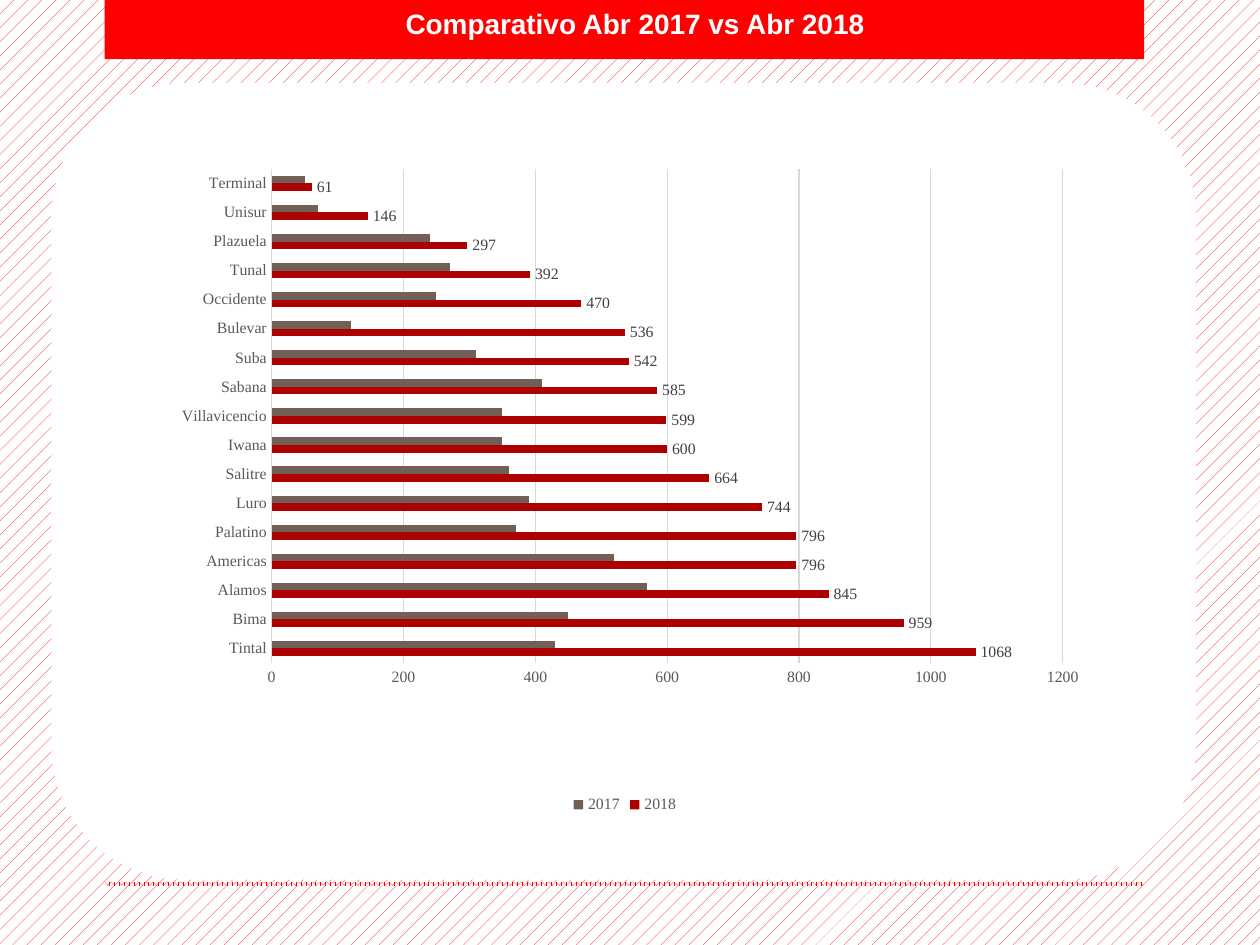
import pptx
import pptx.chart.data
import pptx.dml.color
import pptx.enum.chart
import pptx.enum.dml
import pptx.enum.shapes
import pptx.enum.text
import pptx.oxml
import pptx.oxml.ns
import pptx.util
from pptx.util import Inches

RED, WHITE = "FF0000", "FFFFFF"
GRID, AXIS_TEXT, LABEL_TEXT = "D9D9D9", "595959", "404040"
SERIF = "Times New Roman"
PATTERN = pptx.enum.dml.MSO_PATTERN
TICK = pptx.enum.chart.XL_TICK_MARK

# venue: (2018, 2017)
VENUES = {
    "Tintal": (1068, 430), "Bima": (959, 450), "Alamos": (845, 570),
    "Americas": (796, 520), "Palatino": (796, 370), "Luro": (744, 390),
    "Salitre": (664, 360), "Iwana": (600, 350), "Villavicencio": (599, 350),
    "Sabana": (585, 410), "Suba": (542, 310), "Bulevar": (536, 120),
    "Occidente": (470, 250), "Tunal": (392, 270), "Plazuela": (297, 240),
    "Unisur": (146, 70), "Terminal": (61, 50),
}
SERIES = (("2018", "AD0101"), ("2017", "726056"))


def rgb(code):
    return pptx.dml.color.RGBColor.from_string(code)


def paint_pattern(fill, pattern):
    """Fill with a red pattern on white."""
    fill.patterned()
    fill.pattern = pattern
    fill.fore_color.rgb = rgb(RED)
    fill.back_color.rgb = rgb(WHITE)


def style_font(font, size, color, name=SERIF, bold=False):
    font.size = pptx.util.Pt(size)
    font.color.rgb = rgb(color)
    font.name = name
    font.bold = bold


def set_inner_plot(chart, **fractions):
    """Fix the inner plot area, in fractions of the chart's size."""
    tags = "".join(f'<c:{key}Mode val="edge"/>' for key in "xy")
    tags += "".join(f'<c:{key} val="{value}"/>' for key, value in fractions.items())
    layout = pptx.oxml.parse_xml(
        f'<c:layout {pptx.oxml.ns.nsdecls("c")}><c:manualLayout>'
        f'<c:layoutTarget val="inner"/>{tags}</c:manualLayout></c:layout>')
    plot_area = chart._chartSpace.chart.plotArea
    for old in plot_area.findall(pptx.oxml.ns.qn("c:layout")):
        plot_area.remove(old)
    plot_area.insert(0, layout)


class Board:
    """Holds the current slide and draws elements on it."""

    def __init__(self, slide):
        self.slide = slide
        paint_pattern(slide.background.fill, PATTERN.PERCENT_10)

    def shape(self, kind, left, top, width, height, color=None, line=None):
        """Draw a preset shape; without a colour it gets the red pattern."""
        shape = self.slide.shapes.add_shape(
            kind, Inches(left), Inches(top), Inches(width), Inches(height))
        shape.shadow.inherit = False
        if color:
            shape.fill.solid()
            shape.fill.fore_color.rgb = rgb(color)
        else:
            paint_pattern(shape.fill, PATTERN.PERCENT_75)
        if line:
            shape.line.color.rgb = rgb(line)
            shape.line.width = pptx.util.Pt(1.75)
        else:
            shape.line.fill.background()

    def title(self, text, left, top, width, height):
        box = self.slide.shapes.add_textbox(
            Inches(left), Inches(top), Inches(width), Inches(height))
        frame = box.text_frame
        frame.word_wrap = True
        frame.auto_size = pptx.enum.text.MSO_AUTO_SIZE.SHAPE_TO_FIT_TEXT
        para = frame.paragraphs[0]
        para.alignment = pptx.enum.text.PP_ALIGN.CENTER
        span = para.add_run()
        span.text = text
        style_font(span.font, 16, WHITE, "Arial", True)

    def bar_chart(self, left, top, width, height):
        data = pptx.chart.data.CategoryChartData()
        data.categories = list(VENUES)
        for (name, _), values in zip(SERIES, zip(*VENUES.values())):
            data.add_series(name, values)
        chart = self.slide.shapes.add_chart(
            pptx.enum.chart.XL_CHART_TYPE.BAR_CLUSTERED, Inches(left),
            Inches(top), Inches(width), Inches(height), data).chart
        style_font(chart.font, 10, "000000")
        chart.has_title = False
        set_inner_plot(chart, x=0.153, y=0.032, w=0.777, h=0.736)

        plot = chart.plots[0]
        plot.gap_width = 182
        plot.vary_by_categories = False
        for series, (_, color) in zip(plot.series, SERIES):
            series.format.fill.solid()
            series.format.fill.fore_color.rgb = rgb(color)
        labels = plot.series[0].data_labels
        labels.show_value = True
        labels.position = pptx.enum.chart.XL_LABEL_POSITION.OUTSIDE_END
        style_font(labels.font, 9, LABEL_TEXT)

        names, scale = chart.category_axis, chart.value_axis
        for axis in (names, scale):
            axis.major_tick_mark = axis.minor_tick_mark = TICK.NONE
            style_font(axis.tick_labels.font, 9, AXIS_TEXT)
        names.has_major_gridlines = False
        scale.has_major_gridlines = True
        scale.minimum_scale, scale.maximum_scale, scale.major_unit = 0, 1200, 200
        scale.format.line.fill.background()
        for line in (names.format.line, scale.major_gridlines.format.line):
            line.color.rgb = rgb(GRID)
            line.width = pptx.util.Pt(0.75)

        chart.has_legend = True
        chart.legend.position = pptx.enum.chart.XL_LEGEND_POSITION.BOTTOM
        chart.legend.include_in_layout = False
        style_font(chart.legend.font, 9, AXIS_TEXT)


def main():
    deck = pptx.Presentation()
    deck.slide_width, deck.slide_height = Inches(10), Inches(7.5)
    board = Board(deck.slides.add_slide(deck.slide_layouts[6]))
    kinds = pptx.enum.shapes.MSO_SHAPE
    board.shape(kinds.RECTANGLE, 0.83, 7, 8.25, 0.03)
    board.shape(kinds.RECTANGLE, 0.83, 0, 8.25, 0.47, RED)
    board.shape(kinds.ROUNDED_RECTANGLE, 0.42, 0.67, 9.06, 6.3, WHITE, WHITE)
    board.title("Comparativo Abr 2017 vs Abr 2018", 0.92, 0, 8.24, 0.37)
    board.bar_chart(0.92, 1.17, 8.08, 5.33)
    deck.save("out.pptx")


if __name__ == "__main__":
    main()
